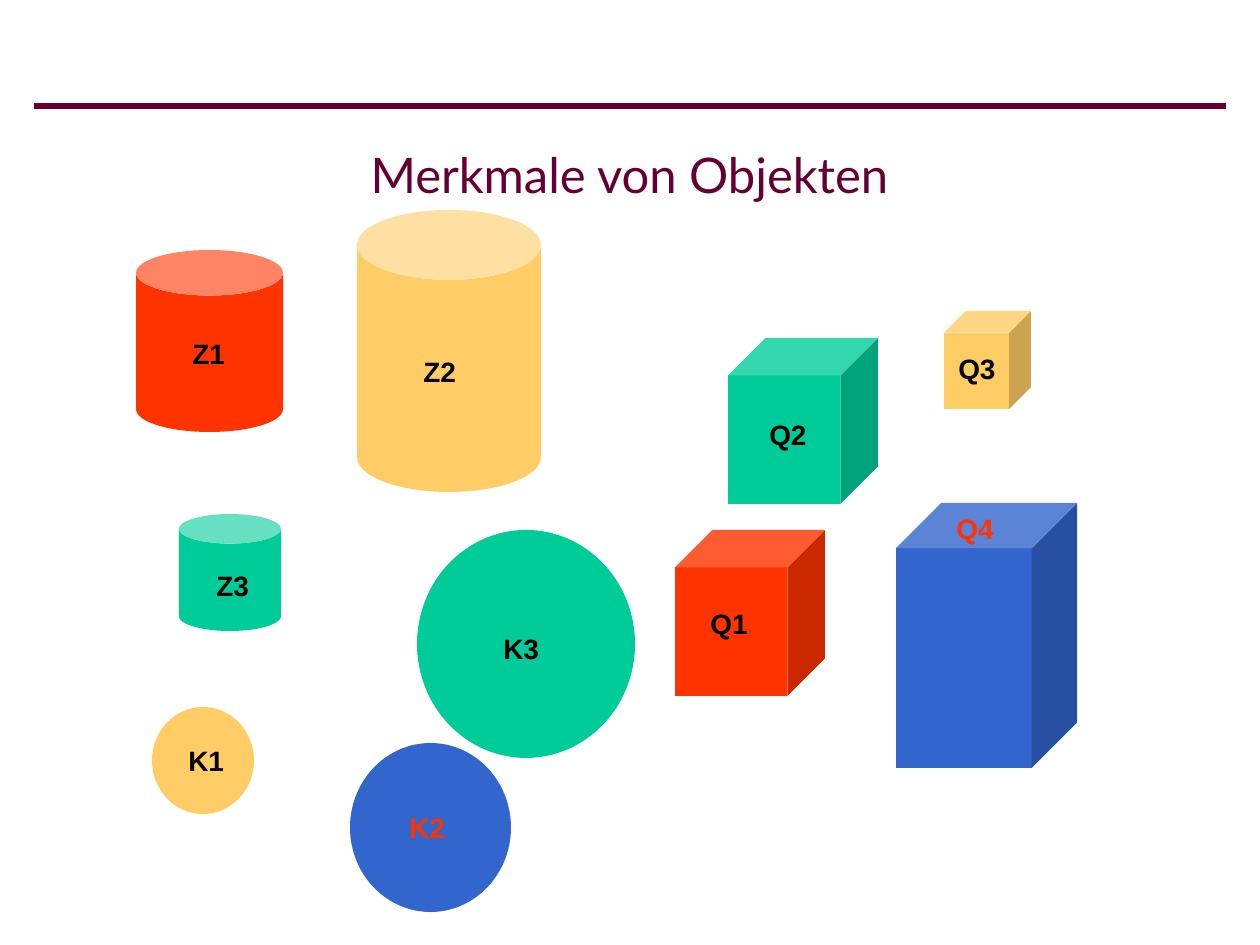
"""Build a slide of labelled, coloured solids that differ in shape, size and colour."""
from lxml import etree
from pptx import Presentation
from pptx.dml.color import RGBColor
from pptx.enum.shapes import MSO_CONNECTOR, MSO_SHAPE
from pptx.enum.text import MSO_ANCHOR, MSO_AUTO_SIZE, PP_ALIGN
from pptx.oxml.ns import qn
from pptx.util import Emu, Pt

CAN, CUBE, BALL = MSO_SHAPE.CAN, MSO_SHAPE.CUBE, MSO_SHAPE.OVAL
STRAIGHT = MSO_CONNECTOR.STRAIGHT
CENTER, MIDDLE = PP_ALIGN.CENTER, MSO_ANCHOR.MIDDLE
GROW = MSO_AUTO_SIZE.SHAPE_TO_FIT_TEXT

PX_PER_INCH = 126
PLUM, BLACK = "660033", "000000"
RED, YELLOW, GREEN, BLUE = "FF3300", "FFCC66", "00CC99", "3366CC"

TITLE = "Merkmale von Objekten"
TITLE_BOX = (34, 106, 1191, 136)
RULE = (34, 106, 1226, 106)
LABEL_SIZE = (63, 47)

SOLIDS = [
    ("Z2", CAN, 0.38, YELLOW, (357, 210, 184, 282), (411, 348)),
    ("Z1", CAN, 0.31, RED, (136, 250, 147, 182), (180, 330)),
    ("Z3", CAN, 0.29, GREEN, (179, 514, 102, 117), (204, 562)),
    ("Q1", CUBE, 0.25, RED, (675, 530, 150, 166), (698, 600)),
    ("Q2", CUBE, 0.25, GREEN, (728, 338, 150, 166), (757, 411)),
    ("Q3", CUBE, 0.25, YELLOW, (944, 311, 87, 98), (946, 345)),
    ("Q4", CUBE, 0.25, BLUE, (896, 503, 181, 265), (944, 505)),
    ("K3", BALL, None, GREEN, (417, 530, 218, 228), (491, 625)),
    ("K2", BALL, None, BLUE, (350, 743, 161, 169), (397, 804)),
    ("K1", BALL, None, YELLOW, (152, 707, 102, 107), (176, 737)),
]


def px(*lengths):
    return [Emu(round(length * 914400 / PX_PER_INCH)) for length in lengths]


def color(hex_string):
    return RGBColor.from_string(hex_string)


def set_font(paragraph, name, size, hex_string, bold=False):
    font = paragraph.font
    font.name, font.size, font.bold = name, Pt(size), bold
    font.color.rgb = color(hex_string)


def add_rule(slide):
    rule = slide.shapes.add_connector(STRAIGHT, *px(*RULE))
    rule.line.color.rgb = color(PLUM)
    rule.line.width = Pt(3)
    etree.SubElement(rule._element.spPr, qn("a:effectLst"))


def add_title(slide):
    title = slide.shapes.title
    title.left, title.top, title.width, title.height = px(*TITLE_BOX)
    frame = title.text_frame
    frame.text = TITLE
    frame.vertical_anchor = MIDDLE
    frame.paragraphs[0].alignment = CENTER
    set_font(frame.paragraphs[0], "Lato", 28, PLUM)


def add_solid(slide, name, kind, depth, fill, box, label_at):
    group = slide.shapes.add_group_shape()
    solid = group.shapes.add_shape(kind, *px(*box))
    solid.shadow.inherit = False
    solid.fill.solid()
    solid.fill.fore_color.rgb = color(fill)
    solid.line.fill.background()
    if depth is not None:
        solid.adjustments[0] = depth

    label = group.shapes.add_textbox(*px(*label_at, *LABEL_SIZE))
    frame = label.text_frame
    frame.text = name
    frame.word_wrap = True
    frame.auto_size = GROW
    set_font(frame.paragraphs[0], "Arial", 16, RED if fill == BLUE else BLACK, bold=True)


def main():
    presentation = Presentation()
    presentation.slide_width, presentation.slide_height = px(1260, 945)
    slide = presentation.slides.add_slide(presentation.slide_layouts[5])
    add_rule(slide)
    add_title(slide)
    for solid in SOLIDS:
        add_solid(slide, *solid)
    presentation.save("out.pptx")


if __name__ == "__main__":
    main()
